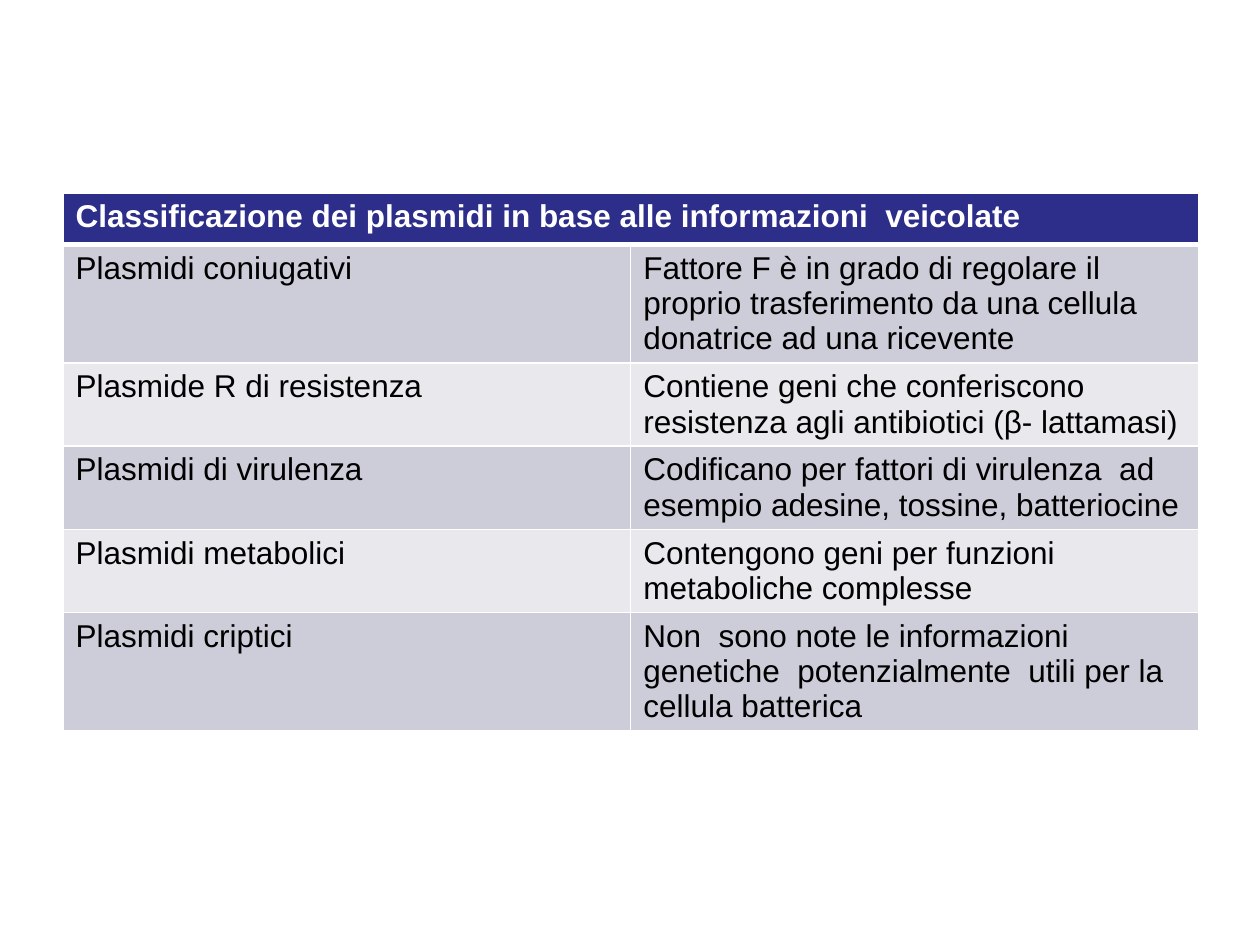
"""Build a slide with a table that classifies plasmids by the information they carry."""
from lxml.etree import SubElement
from pptx import Presentation
from pptx.dml.color import RGBColor
from pptx.oxml.ns import qn
from pptx.util import Inches, Pt

COLORS = {"header": "2D2D8A", "odd": "CDCDDA", "even": "E8E8ED", "line": "FFFFFF",
          "light": "FFFFFF", "dark": "000000"}
ROWS = [
    ("Classificazione dei plasmidi in base alle informazioni  veicolate", ""),
    ("Plasmidi coniugativi",
     "Fattore F è in grado di regolare il proprio trasferimento da una cellula donatrice ad una ricevente"),
    ("Plasmide R di resistenza",
     "Contiene geni che conferiscono resistenza agli antibiotici (β- lattamasi)"),
    ("Plasmidi di virulenza",
     "Codificano per fattori di virulenza  ad esempio adesine, tossine, batteriocine"),
    ("Plasmidi metabolici", "Contengono geni per funzioni metaboliche complesse"),
    ("Plasmidi criptici",
     "Non  sono note le informazioni  genetiche  potenzialmente  utili per la cellula batterica"),
]


def add_border(cell, side, width):
    ln = SubElement(cell._tc.get_or_add_tcPr(), qn(f"a:ln{side}"), w=str(Pt(width)))
    fill = SubElement(ln, qn("a:solidFill"))
    SubElement(fill, qn("a:srgbClr"), val=COLORS["line"])


prs = Presentation()
prs.slide_width, prs.slide_height = Inches(10), Inches(7.5)
W, H = prs.slide_width, prs.slide_height
s = prs.slides.add_slide(prs.slide_layouts[6])

row_h = int(H * 5.47 / 100)
frame = s.shapes.add_table(len(ROWS), 2, int(W * 0.05), int(H * 20.4 / 100),
                           int(W * 0.9), row_h * len(ROWS))
table = frame.table
for col in table.columns:
    col.width = int(W * 45.06 / 100)
for row in table.rows:
    row.height = row_h
table.cell(0, 0).merge(table.cell(0, 1))

for i, texts in enumerate(ROWS):
    band = "header" if i == 0 else "odd" if i % 2 else "even"
    font = {"name": "Arial", "size": Pt(18), "bold": i == 0}
    for j, text in enumerate(texts):
        cell = table.cell(i, j)
        widths = {"L": 1, "R": 1, "T": 3 if i == 1 else 1, "B": 3 if i == 0 else 1}
        for side, width in widths.items():
            add_border(cell, side, width)
        cell.fill.solid()
        cell.fill.fore_color.rgb = RGBColor.from_string(COLORS[band])
        if cell.is_spanned:
            continue
        r = cell.text_frame.paragraphs[0].add_run()
        r.text = text
        for key, value in font.items():
            setattr(r.font, key, value)
        r.font.color.rgb = RGBColor.from_string(COLORS["light" if i == 0 else "dark"])

prs.save("out.pptx")
